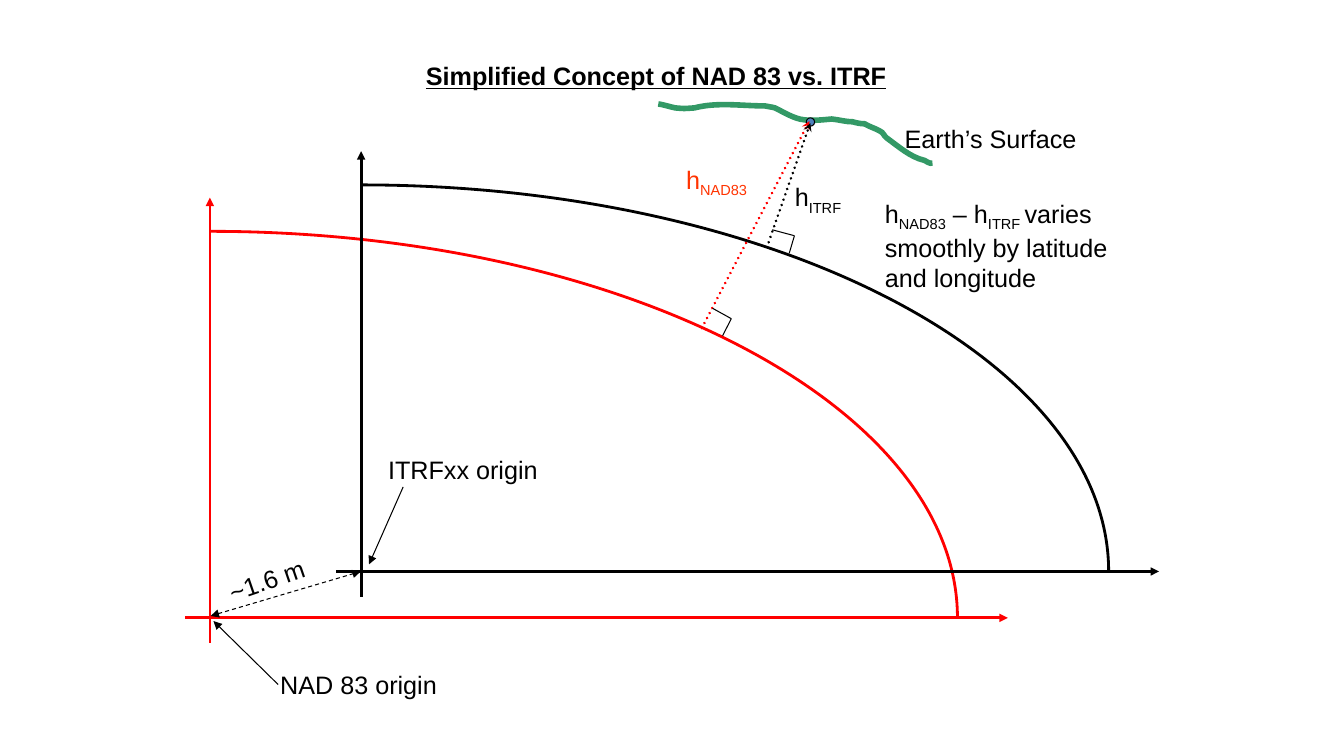
from dataclasses import dataclass
from typing import Optional, Union

from lxml.etree import SubElement
from pptx import Presentation
from pptx.dml.color import RGBColor
from pptx.enum.dml import MSO_LINE
from pptx.enum.shapes import MSO_CONNECTOR, MSO_SHAPE
from pptx.enum.text import MSO_ANCHOR, MSO_AUTO_SIZE, PP_ALIGN
from pptx.oxml.ns import qn
from pptx.shapes.shapetree import GroupShapes, SlideShapes
from pptx.text.text import TextFrame
from pptx.util import Cm, Pt

Point = tuple[float, float]
Shapes = Union[SlideShapes, GroupShapes]


@dataclass(frozen=True)
class Theme:
    font: str = "Arial"
    text_size: float = 18
    black: str = "000000"
    red: str = "FF0000"
    orange: str = "FF3300"
    green: str = "339966"
    blue: str = "4F81BD"
    thin: float = 0.75
    medium: float = 2
    thick: float = 4


THEME = Theme()


@dataclass(frozen=True)
class Line:
    start: Point
    end: Point
    color: str = THEME.black
    width: float = THEME.thin
    dash: Optional[MSO_LINE] = None
    start_head: str = ""
    end_head: str = ""


@dataclass(frozen=True)
class Run:
    text: str
    subscript: bool = False


@dataclass(frozen=True)
class Label:
    left: float
    top: float
    width: float
    paragraphs: tuple[tuple[Run, ...], ...]
    height: float = 1.02
    color: str = THEME.black
    rotation: float = 0


@dataclass(frozen=True)
class Datum:
    origin: Point
    color: str


SEMI_MAJOR, SEMI_MINOR = 18.84, 9.74
AXIS_BACK = 0.64
QUARTER_ARC = 0.55  # Bezier handle length for a quarter ellipse

DATUMS = (
    Datum((5.29, 15.57), THEME.red),
    Datum((9.1, 14.4), THEME.black),
)

# Bezier chain: an anchor, then two handles and an anchor for each piece
EARTH_SURFACE = (
    (16.59, 2.62),
    (16.74, 2.64), (16.87, 2.69), (17.02, 2.72),
    (17.27, 2.74), (17.2, 2.74), (17.5, 2.72),
    (18.08, 2.57), (18.69, 2.67), (19.28, 2.67),
    (19.35, 2.69), (19.43, 2.69), (19.53, 2.72),
    (19.74, 2.82), (20.02, 3), (20.27, 3.02),
    (20.47, 3.05), (20.73, 3.02), (20.96, 3),
    (21.16, 3.02), (21.31, 3.07), (21.49, 3.07),
    (21.59, 3.1), (21.69, 3.12), (21.79, 3.12),
    (21.92, 3.2), (22.05, 3.23), (22.17, 3.3),
    (22.28, 3.35), (22.25, 3.4), (22.35, 3.48),
    (22.63, 3.68), (22.94, 3.96), (23.29, 4.04),
    (23.34, 4.06), (23.44, 4.14), (23.5, 4.11),
)

RIGHT_ANGLES = (
    ((17.96, 7.77), (18.43, 8.03), (18.21, 8.46)),
    ((19.46, 5.79), (20.02, 5.94), (19.89, 6.38)),
)

LINES = (
    Line((5.31, 15.52), (9.09, 14.4), dash=MSO_LINE.DASH,
         start_head="triangle", end_head="triangle"),
    Line((20.4, 3.05), (17.68, 8.28), THEME.red, THEME.medium,
         MSO_LINE.ROUND_DOT, start_head="stealth"),
    Line((20.42, 3.1), (19.33, 6.22), THEME.black, THEME.medium,
         MSO_LINE.ROUND_DOT, start_head="stealth"),
    Line((10.16, 12.27), (9.3, 14.22), end_head="triangle"),
    Line((7.01, 17.25), (5.38, 15.65), end_head="triangle"),
)

H = Run("h")
NAD = Run("NAD83", subscript=True)
LABELS = (
    Label(5.49, 14.1, 2.49, ((Run("~1.6 m"),),), rotation=-19.1),
    Label(6.81, 16.74, 4.47, ((Run("NAD 83 origin"),),)),
    Label(9.53, 11.33, 4.29, ((Run("ITRFxx origin"),),)),
    Label(22.55, 2.98, 4.85, ((Run("Earth’s Surface"),),)),
    Label(17.04, 4.01, 2.24, ((H, NAD),), color=THEME.orange),
    Label(19.78, 4.45, 1.8, ((H, Run("ITRF", subscript=True)),)),
    Label(22.05, 4.87, 6.3, (
        (H, NAD, Run(" – h"), Run("ITRF ", subscript=True), Run("varies")),
        (Run("smoothly by latitude"),),
        (Run("and longitude"),),
    ), height=2.54),
)
TITLE = Label(10.48, 1.4, 12.12,
              ((Run("Simplified Concept of NAD 83 vs. ITRF"),),))


def draw_line(shapes: Shapes, line: Line) -> None:
    connector = shapes.add_connector(
        MSO_CONNECTOR.STRAIGHT, *(Cm(value) for value in line.start + line.end))
    connector.line.color.rgb = RGBColor.from_string(line.color)
    connector.line.width = Pt(line.width)
    outline = connector.get_or_add_ln()
    if line.dash is not None:
        connector.line.dash_style = line.dash
        if line.dash == MSO_LINE.ROUND_DOT:
            outline.set("cap", "rnd")
    for tag, head in (("a:headEnd", line.start_head), ("a:tailEnd", line.end_head)):
        if head:
            SubElement(outline, qn(tag)).set("type", head)
    SubElement(connector._element.spPr, qn("a:effectLst"))


def draw_curve(shapes: Shapes, chain: tuple[Point, ...], color: str, width: float) -> None:
    """Draw a Bezier chain as a freeform whose segments become cubic curves."""
    start, *rest = [(Cm(x), Cm(y)) for x, y in chain]
    builder = shapes.build_freeform(*start)
    builder.add_line_segments(rest, close=False)
    curve = builder.convert_to_shape()
    curve.shadow.inherit = False
    curve.fill.background()
    curve.line.color.rgb = RGBColor.from_string(color)
    curve.line.width = Pt(width)
    outline = next(curve._element.iter(qn("a:path")))
    segments = outline.findall(qn("a:lnTo"))
    for first in range(0, len(segments), 3):
        piece = SubElement(outline, qn("a:cubicBezTo"))
        for segment in segments[first:first + 3]:
            piece.append(segment[0])
            outline.remove(segment)


def draw_datum(shapes: Shapes, datum: Datum) -> None:
    """Draw a quarter ellipse with its two axes."""
    x, y = datum.origin
    right, top = x + SEMI_MAJOR, y - SEMI_MINOR
    quarter = ((x, top), (x + QUARTER_ARC * SEMI_MAJOR, top),
               (right, y - QUARTER_ARC * SEMI_MINOR), (right, y))
    draw_curve(shapes, quarter, datum.color, THEME.medium)
    for start, end in (((x, top - 0.85), (x, y + AXIS_BACK)),
                       ((right + 1.27, y), (x - AXIS_BACK, y))):
        draw_line(shapes, Line(start, end, datum.color, THEME.medium,
                               start_head="triangle"))


def write_label(frame: TextFrame, label: Label, heading: bool = False) -> None:
    frame.word_wrap = False
    frame.auto_size = MSO_AUTO_SIZE.SHAPE_TO_FIT_TEXT
    frame.vertical_anchor = MSO_ANCHOR.TOP
    for index, runs in enumerate(label.paragraphs):
        paragraph = frame.add_paragraph() if index else frame.paragraphs[0]
        paragraph.alignment = PP_ALIGN.LEFT
        for part in runs:
            run = paragraph.add_run()
            run.text = part.text
            run.font.name = THEME.font
            run.font.size = Pt(THEME.text_size)
            run.font.color.rgb = RGBColor.from_string(label.color)
            if heading:
                run.font.bold = run.font.underline = True
            if part.subscript:
                run._r.get_or_add_rPr().set("baseline", "-25000")


def label_box(label: Label) -> tuple[Cm, ...]:
    return tuple(Cm(v) for v in (label.left, label.top, label.width, label.height))


def draw_surface_point(shapes: Shapes) -> None:
    point = shapes.add_shape(MSO_SHAPE.OVAL, Cm(20.32), Cm(2.97), Cm(0.21), Cm(0.21))
    point.shadow.inherit = False
    point.fill.solid()
    point.fill.fore_color.rgb = RGBColor.from_string(THEME.blue)
    point.line.color.rgb = RGBColor.from_string(THEME.black)
    point.line.width = Pt(THEME.thin)


def main() -> None:
    presentation = Presentation()
    presentation.slide_width, presentation.slide_height = Cm(33.87), Cm(19.05)
    slide = presentation.slides.add_slide(presentation.slide_layouts[5])
    shapes = slide.shapes
    title = shapes.title
    title.left, title.top, title.width, title.height = label_box(TITLE)
    write_label(title.text_frame, TITLE, heading=True)
    for datum in DATUMS:
        draw_datum(shapes.add_group_shape().shapes, datum)
    draw_curve(shapes, EARTH_SURFACE, THEME.green, THEME.thick)
    draw_surface_point(shapes)
    for line in LINES:
        draw_line(shapes, line)
    for corners in RIGHT_ANGLES:
        for start, end in zip(corners, corners[1:]):
            draw_line(shapes, Line(start, end))
    for label in LABELS:
        box = shapes.add_textbox(*label_box(label))
        box.rotation = label.rotation
        write_label(box.text_frame, label)
    presentation.save("out.pptx")


if __name__ == "__main__":
    main()
